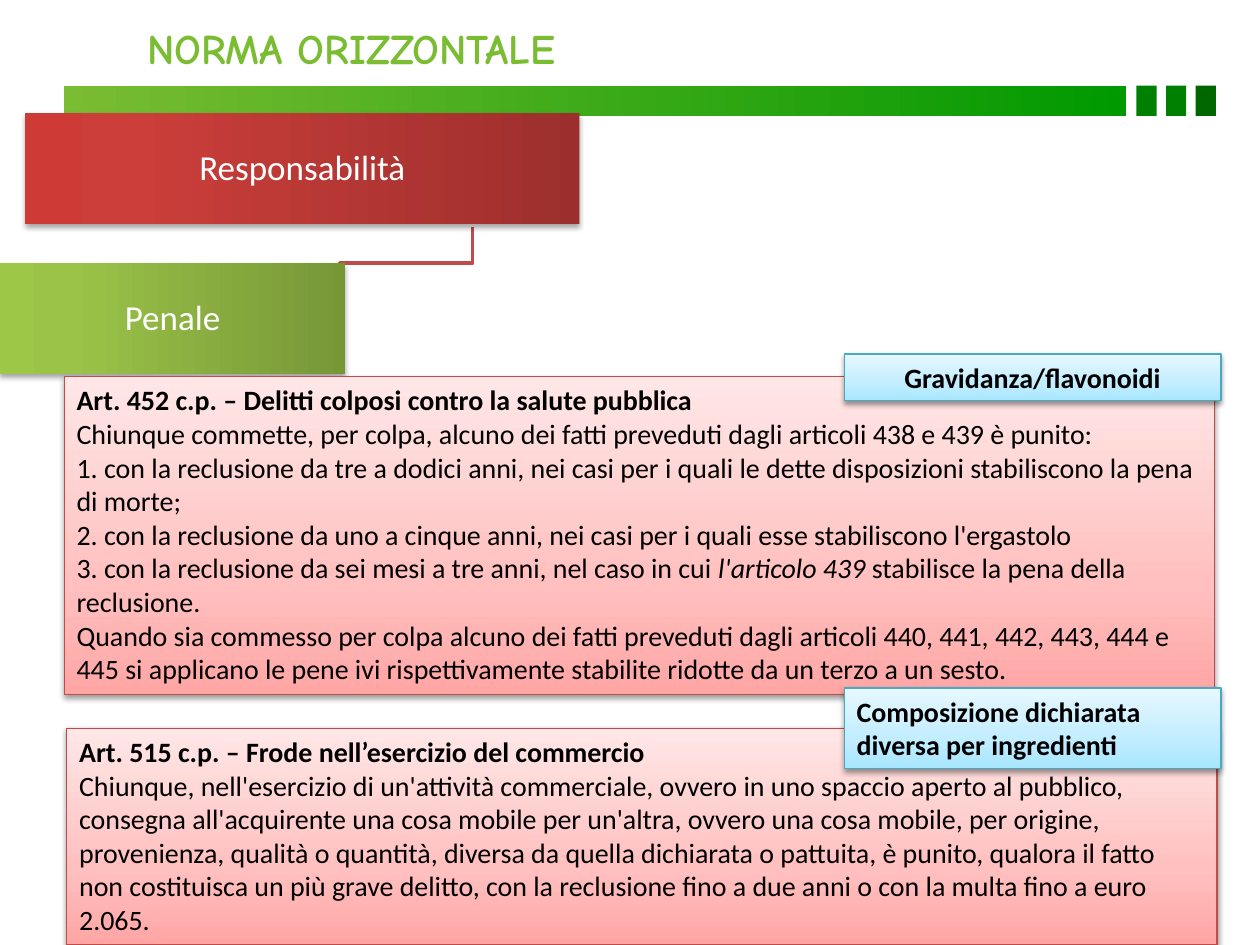
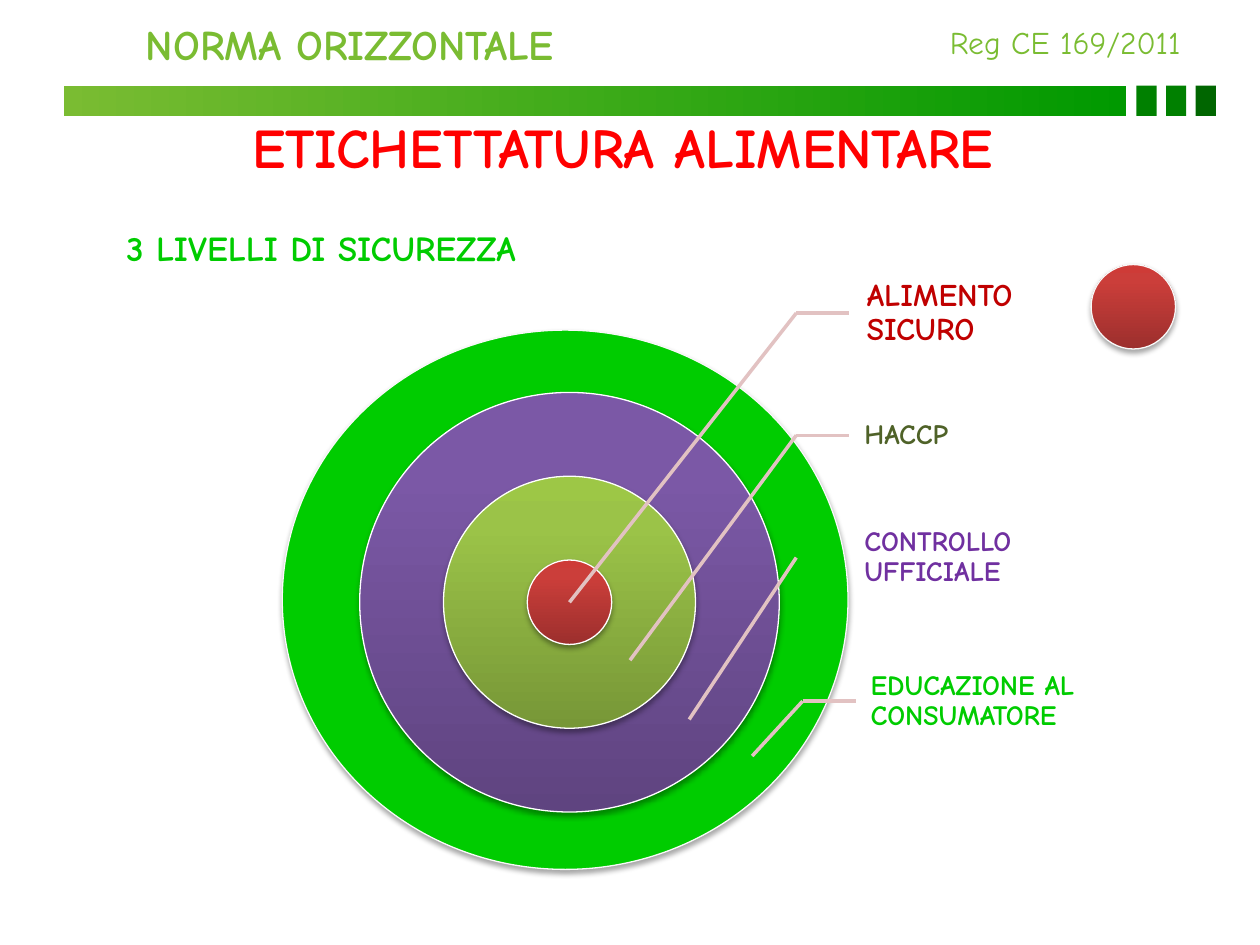
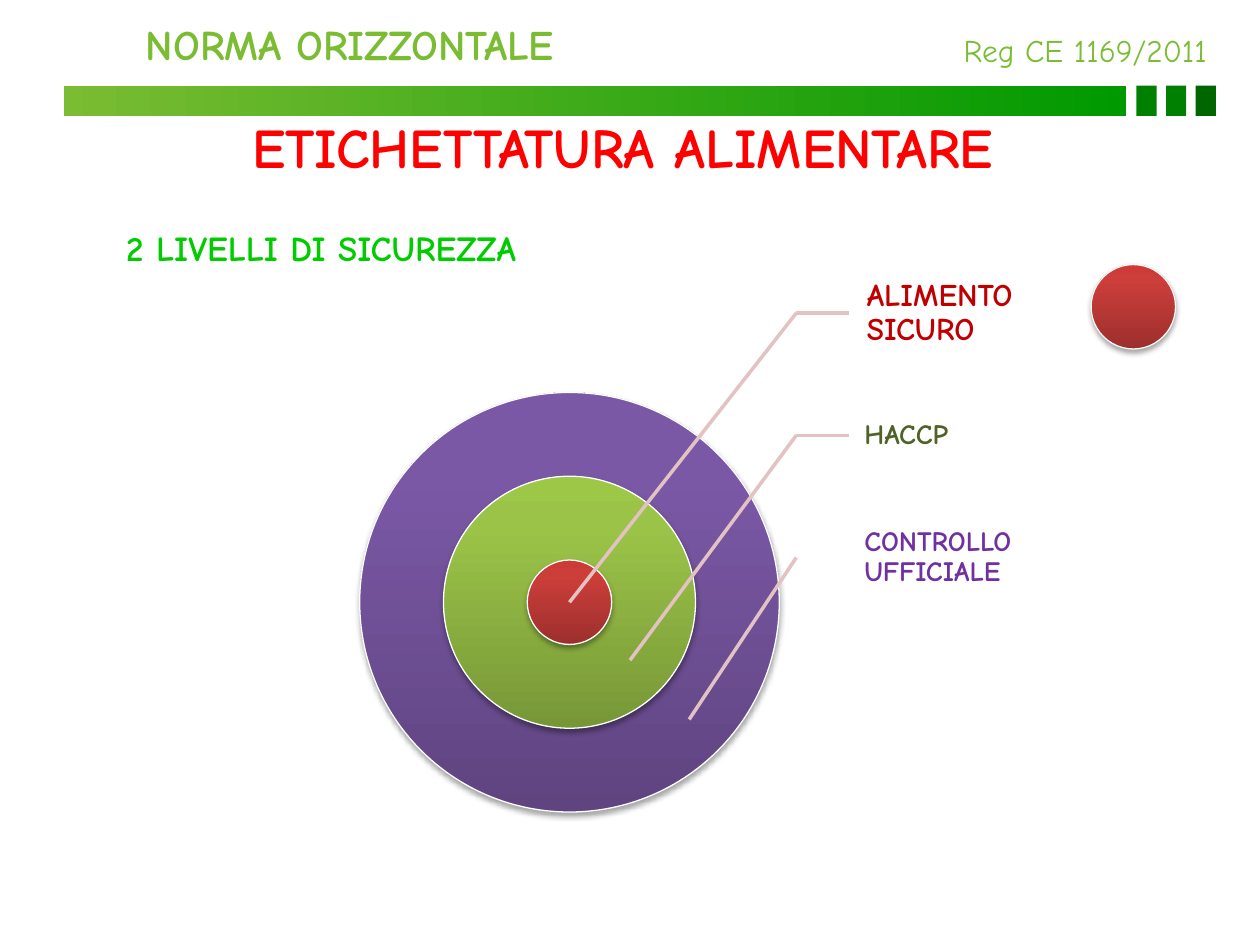
from lxml import etree
from pptx import Presentation, oxml
from pptx import util as u
from pptx.dml.color import RGBColor
from pptx.enum import shapes, text
from pptx.oxml import ns

COLORS = {
    "lime": "7ABC32", "green": "009900", "mid_green": "008000", "dark_green": "006600",
    "bright_green": "00CC00", "red": "FF0000", "deep_red": "C00000", "olive": "4F6228",
    "violet": "7030A0", "brick": "BF4C48", "teal": "46AAC5", "leader": "E2C2C2",
    "white": "FFFFFF", "off_white": "F9F9F9", "black": "000000",
}
# Gradient stops: position in percent, colour
GRADIENTS = {
    "band": [(0, COLORS["lime"]), (100, COLORS["green"])],
    "red": [(0, "9C2F2D"), (80, "CB3E3A"), (100, "CE3B37")],
    "green": [(0, "779737"), (80, "9BC348"), (100, "9DC746")],
    "violet": [(0, "5F4480"), (80, "7B58A6"), (100, "7C57A8")],
    "pink": [(0, "FFA6A5"), (35, "FFC0BF"), (100, "FFE7E7")],
    "sky": [(0, "A7E6FF"), (35, "C1EDFF"), (100, "E7F8FF")],
}
COMIC, SANS = "Comic Neue", "Calibri"
RECT, OVAL = shapes.MSO_SHAPE.RECTANGLE, shapes.MSO_SHAPE.OVAL
LEFT, CENTER = text.PP_ALIGN.LEFT, text.PP_ALIGN.CENTER
TOP, MIDDLE = text.MSO_ANCHOR.TOP, text.MSO_ANCHOR.MIDDLE

prs = Presentation()
prs.slide_width, prs.slide_height = u.Inches(10), u.Inches(7.5)
COL = prs.slide_width / 100
ROW = prs.slide_height / 75


def place(slide, box, kind=None, fill=None, angle=270, line=None, shadow=None):
    """Put a shape on the grid, or a text box if no kind is given.

    box: left, top, width, height in columns and rows; fill: a colour or gradient stops;
    shadow: opacity in percent and distance in points.
    """
    left, top, width, height = box
    frame = [round(n) for n in (left * COL, top * ROW, width * COL, height * ROW)]
    if kind is None:
        return slide.shapes.add_textbox(*frame)
    shape = slide.shapes.add_shape(kind, *frame)
    shape.shadow.inherit = False
    shape.fill.solid()
    if isinstance(fill, str):
        shape.fill.fore_color.rgb = RGBColor.from_string(fill)
    else:
        stops = "".join(f'<a:gs pos="{at * 1000}"><a:srgbClr val="{color}"/></a:gs>'
                        for at, color in fill)
        solid = shape._element.spPr.find(ns.qn("a:solidFill"))
        solid.getparent().replace(solid, oxml.parse_xml(
            f'<a:gradFill {ns.nsdecls("a")} rotWithShape="1"><a:gsLst>{stops}</a:gsLst>'
            f'<a:lin ang="{angle * 60000}" scaled="0"/></a:gradFill>'))
    if line:
        shape.line.color.rgb = RGBColor.from_string(line)
        shape.line.width = u.Pt(0.75)
    else:
        shape.line.fill.background()
    if shadow:
        opacity, distance = shadow
        shape._element.spPr.find(ns.qn("a:effectLst")).append(oxml.parse_xml(
            f'<a:outerShdw {ns.nsdecls("a")} blurRad="{u.Pt(3.1)}" dist="{u.Pt(distance)}"'
            f' dir="5400000" rotWithShape="0"><a:srgbClr val="{COLORS["black"]}">'
            f'<a:alpha val="{opacity * 1000}"/></a:srgbClr></a:outerShdw>'))
    return shape


def write(shape, content, size=16, font=SANS, color="black", bold=False, align=LEFT,
          anchor=TOP, wrap=True, spacing=None, insets=None):
    """Fill a shape with a string or with paragraphs of (text, style) runs; style is b, i or empty."""
    frame = shape.text_frame
    frame.word_wrap, frame.vertical_anchor = wrap, anchor
    if insets:
        first, rest = insets
        frame.margin_left = u.Inches(first)
        frame.margin_top = frame.margin_right = frame.margin_bottom = u.Inches(rest)
    paragraphs = [[(content, "b" if bold else "")]] if isinstance(content, str) else content
    for number, runs in enumerate(paragraphs):
        paragraph = frame.add_paragraph() if number else frame.paragraphs[0]
        paragraph.alignment = align
        if spacing:
            paragraph.line_spacing = spacing
        for words, style in runs:
            run = paragraph.add_run()
            run.text = words
            run.font.name, run.font.size = font, u.Pt(size)
            run.font.bold, run.font.italic = style == "b", style == "i"
            run.font.color.rgb = RGBColor.from_string(COLORS[color])


# Heading and band of every slide
headings = [(10.7, 1.3), (10.6, 1), (10.6, 1)]
slides = []
for left, top in headings:
    slide = prs.slides.add_slide(prs.slide_layouts[6])
    slides.append(slide)
    place(slide, (5.1, 6.8, 84.3, 2.4), RECT, GRADIENTS["band"], angle=0)
    for step, color in enumerate(("mid_green", "mid_green", "dark_green")):
        place(slide, (90.2 + 2.35 * step, 6.8, 1.6, 2.4), RECT, COLORS[color])
    write(place(slide, (left, top, 41.6, 5)), "NORMA ORIZZONTALE",
          size=24, font=COMIC, color="lime", bold=True, wrap=False)

# Slide 1: criminal liability
liability, *label_slides = slides
bracket_points = [(round(x * COL), round(y * ROW))
                  for x, y in ((37.5, 18), (37.5, 20.9), (27, 20.9), (27, 23.8))]
builder = liability.shapes.build_freeform(*bracket_points[0])
builder.add_line_segments(bracket_points[1:], close=False)
bracket = builder.convert_to_shape()
bracket.shadow.inherit = False
bracket.fill.background()
bracket.line.color.rgb = RGBColor.from_string(COLORS["brick"])
bracket.line.width = u.Pt(2.25)

for branch, box, gradient in (("Responsabilità", (2, 9, 44, 8.8), "red"),
                              ("Penale", (0, 20.9, 27.4, 8.8), "green")):
    write(place(liability, box, RECT, GRADIENTS[gradient], angle=180, shadow=(35, 1.8)), branch,
          size=20, color="white", align=CENTER, anchor=MIDDLE, spacing=0.9, insets=(0.03, 0.03))

article_452 = [
    [("Art. 452 c.p. – Delitti colposi contro la salute pubblica", "b")],
    [("Chiunque commette, per colpa, alcuno dei fatti preveduti dagli articoli 438 e 439 è punito:", "")],
    [("1. con la reclusione da tre a dodici anni, nei casi per i quali le dette disposizioni "
      "stabiliscono la pena di morte;", "")],
    [("2. con la reclusione da uno a cinque anni, nei casi per i quali esse stabiliscono l'ergastolo", "")],
    [("3. con la reclusione da sei mesi a tre anni, nel caso in cui ", ""), ("l'articolo 439 ", "i"),
     ("stabilisce la pena della reclusione.", "")],
    [("Quando sia commesso per colpa alcuno dei fatti preveduti dagli articoli 440, 441, 442, 443, "
      "444 e 445 si applicano le pene ivi rispettivamente stabilite ridotte da un terzo a un sesto.", "")],
]
article_515 = [
    [("Art. 515 c.p. – Frode nell’esercizio del commercio", "b")],
    [("Chiunque, nell'esercizio di un'attività commerciale, ovvero in uno spaccio aperto al pubblico, "
      "consegna all'acquirente una cosa mobile per un'altra, ovvero una cosa mobile, per origine, "
      "provenienza, qualità o quantità, diversa da quella dichiarata o pattuita, è punito, qualora il "
      "fatto non costituisca un più grave delitto, con la reclusione fino a due anni o con la multa "
      "fino a euro 2.065.", "")],
]
panels = [
    (article_452, (5.1, 29.9, 91.3, 25.2), "pink", "brick", LEFT),
    (article_515, (5.3, 57.8, 91.3, 17.2), "pink", "brick", LEFT),
    ("Gravidanza/flavonoidi", (67, 28.1, 29.9, 3.7), "sky", "teal", CENTER),
    ("Composizione dichiarata diversa per ingredienti", (67, 54.6, 29.9, 6.4), "sky", "teal", LEFT),
]
for content, box, gradient, edge, align in panels:
    write(place(liability, box, RECT, GRADIENTS[gradient], line=COLORS[edge], shadow=(38, 1.6)),
          content, bold=True, align=align)

# Slides 2 and 3: rings of food safety
CENTER_X, CENTER_Y = 45.2, 47.8
LABEL_LEFT, LABEL_TOP, LABEL_STEP, ELBOW_GAP = 67.4, 20, 9.7, 4.2
rings = [("violet", 33.3), ("green", 20), ("red", 6.7)]
# Label, size, colour, left, top, width, end of the leader, whether a tick joins the label
labels = [
    ("ALIMENTO SICURO", 18, "deep_red", LABEL_LEFT, LABEL_TOP, 16.7, (CENTER_X, CENTER_Y), True),
    ("HACCP", 16, "olive", LABEL_LEFT, LABEL_TOP + LABEL_STEP, 16.7, (50, 52.4), True),
    ("CONTROLLO UFFICIALE", 16, "violet", LABEL_LEFT, LABEL_TOP + 2 * LABEL_STEP, 16.7,
     (54.7, 57.1), False),
    ("EDUCAZIONE AL CONSUMATORE", 16, "bright_green", 67.9, 50.8, 22.1, (59.7, 60), True),
]
versions = [
    ("3 LIVELLI DI SICUREZZA", "Reg CE 169/2011", (74.4, 1.3, 21.8, 4), labels),
    ("2 LIVELLI DI SICUREZZA", "Reg CE 1169/2011", (75.5, 2, 23, 4), labels[:3]),
]
for slide, (levels, regulation, regulation_box, shown_labels) in zip(label_slides, versions):
    write(place(slide, (2.4, 8.4, 94.1, 6.3)), "ETICHETTATURA ALIMENTARE",
          size=32, font=COMIC, color="red", bold=True, align=CENTER)
    write(place(slide, regulation_box), regulation, size=18, font=COMIC, color="lime", wrap=False)
    write(place(slide, (-19.5, 15.5, 90, 8.3)), levels, size=20, font=COMIC,
          color="bright_green", bold=True, align=CENTER, anchor=MIDDLE)

    if len(shown_labels) == len(labels):
        place(slide, (22.4, 26.2, 44.9, 42.8), OVAL, COLORS["bright_green"],
              line=COLORS["off_white"], shadow=(35, 1.8))
    for gradient, diameter in rings:
        place(slide, (CENTER_X - diameter / 2, CENTER_Y - diameter / 2, diameter, diameter),
              OVAL, GRADIENTS[gradient], line=COLORS["white"], shadow=(35, 1.8))
    place(slide, (86.6, 21, 6.7, 6.7), OVAL, GRADIENTS["red"],
          line=COLORS["off_white"], shadow=(35, 1.8))

    for label, size, color, left, top, width, target, has_tick in shown_labels:
        write(place(slide, (left, top, width, LABEL_STEP)), label, size=size, font=COMIC,
              color=color, bold=True, anchor=MIDDLE, spacing=0.9,
              insets=(0.14, 0.03) if size == 18 else (0.12, 0.02))
        elbow = (left - ELBOW_GAP, top + LABEL_STEP / 2)
        ends = [(left, elbow[1]), target] if has_tick else [target]
        for end_x, end_y in ends:
            leader = slide.shapes.add_connector(
                shapes.MSO_CONNECTOR.STRAIGHT, round(elbow[0] * COL), round(elbow[1] * ROW),
                round(end_x * COL), round(end_y * ROW))
            leader.line.color.rgb = RGBColor.from_string(COLORS["leader"])
            leader.line.width = u.Pt(2)
            etree.SubElement(leader._element.spPr, ns.qn("a:effectLst"))

prs.save("out.pptx")
